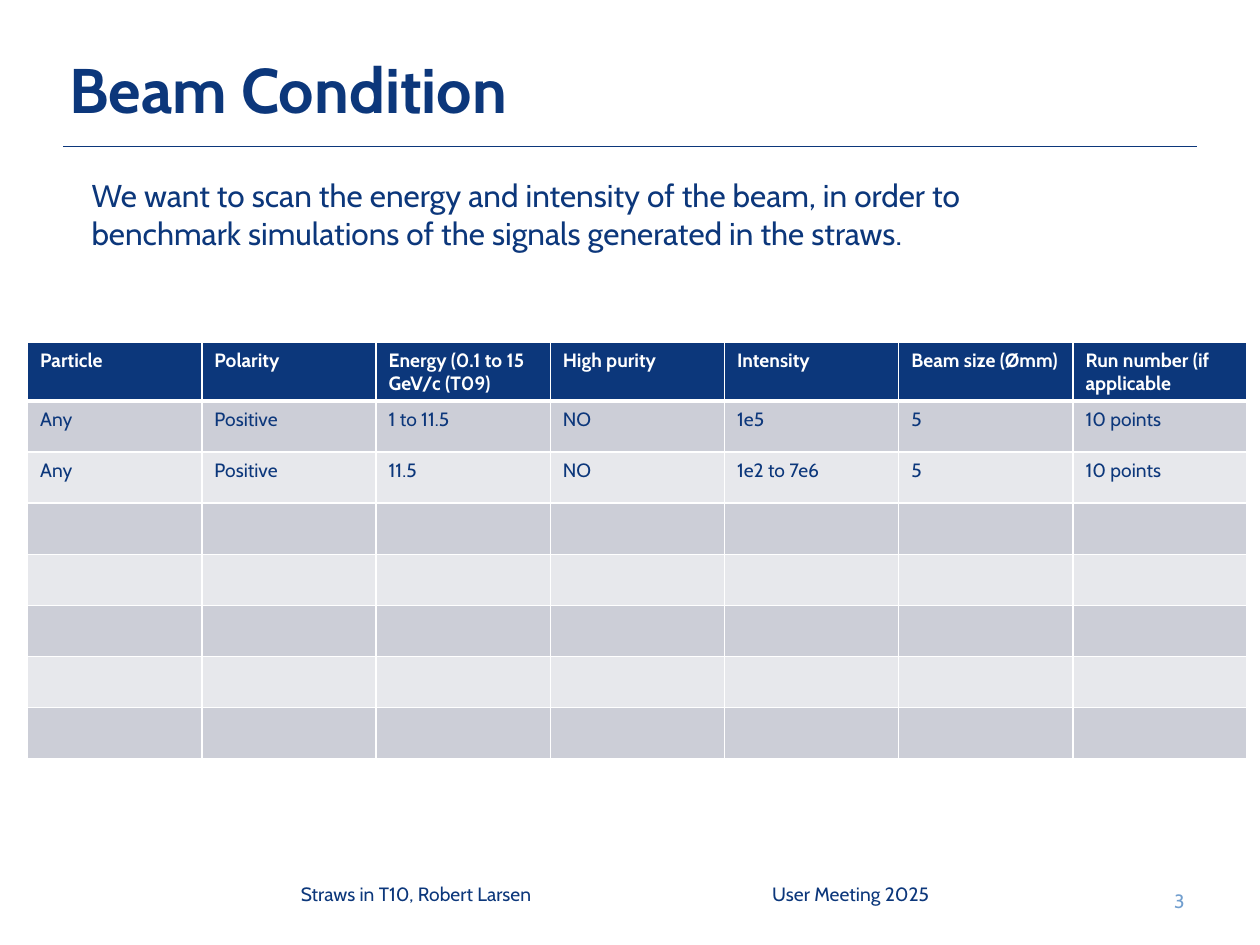
from lxml.etree import SubElement as Sub
from pptx import Presentation
from pptx.dml.color import RGBColor as RGB
from pptx.enum.shapes import MSO_CONNECTOR as Conn
from pptx.enum.text import MSO_ANCHOR as Anchor, PP_ALIGN as Align
from pptx.oxml.ns import qn
from pptx.util import Pt

FONT = "Cabin"
COLORS = {
    "navy": "0C377B",
    "white": "FFFFFF",
    "dark": "CCCED7",
    "light": "E7E8EC",
    "page": "729FCF",
}
HEAD = ["Particle", "Polarity", "Energy (0.1 to 15 GeV/c (T09)", "High purity",
        "Intensity", "Beam size (Ømm)", "Run number (if applicable"]
RUNS = [
    ["Any", "Positive", "1 to 11.5", "NO", "1e5", "5", "10 points"],
    ["Any", "Positive", "11.5", "NO", "1e2 to 7e6", "5", "10 points"],
]
ROWS = 8
COL_W, ROW_H = 99.57, 29.2


def tint(name):
    return RGB.from_string(COLORS[name])


def style(frame, size, color, bold=False):
    for para in frame.paragraphs:
        for run in para.runs:
            font = run.font
            font.name, font.size, font.bold = FONT, Pt(size), bold
            font.color.rgb = tint(color)


def add_text(slide, text, box, size, color="navy", bold=False,
             anchor=Anchor.TOP, align=Align.LEFT, inset=7.2):
    frame = slide.shapes.add_textbox(*map(Pt, box)).text_frame
    frame.word_wrap = True
    frame.vertical_anchor = anchor
    frame.margin_left = frame.margin_right = Pt(inset)
    frame.text = text
    frame.paragraphs[0].alignment = align
    style(frame, size, color, bold)


def add_rule(slide, left, right, y):
    rule = slide.shapes.add_connector(Conn.STRAIGHT, Pt(left), Pt(y), Pt(right), Pt(y))
    rule.line.color.rgb = tint("navy")
    rule.line.width = Pt(0.5)
    Sub(rule._element.spPr, qn("a:effectLst"))


def set_edges(cell, widths):
    props = cell._tc.get_or_add_tcPr()
    for side, width in zip("LRTB", widths):
        line = Sub(props, qn(f"a:ln{side}"), w=str(Pt(width)))
        Sub(Sub(line, qn("a:solidFill")), qn("a:srgbClr"), val=COLORS["white"])


def fill_cell(cell, text, row):
    head = row == 0
    set_edges(cell, (1, 1, 3 if row == 1 else 1, 3 if head else 1))
    cell.fill.solid()
    cell.fill.fore_color.rgb = tint("navy" if head else "dark" if row % 2 else "light")
    cell.text_frame.text = text
    style(cell.text_frame, 11, "white" if head else "navy", head)


def add_grid(slide, left, top):
    cols = len(HEAD)
    table = slide.shapes.add_table(
        ROWS, cols, Pt(left), Pt(top), Pt(cols * COL_W), Pt(ROWS * ROW_H)).table
    for col in table.columns:
        col.width = Pt(COL_W)
    for row in table.rows:
        row.height = Pt(ROW_H)
    data = [HEAD] + RUNS
    data += [[""] * cols] * (ROWS - len(data))
    for r, texts in enumerate(data):
        for c, text in enumerate(texts):
            fill_cell(table.cell(r, c), text, r)


def main():
    deck = Presentation()
    deck.slide_width, deck.slide_height = Pt(720), Pt(540)
    slide = deck.slides.add_slide(deck.slide_layouts[6])
    add_rule(slide, 36, 684, 83.5)
    add_text(slide, "Beam Condition", (36, 18.7, 648, 64), 36, bold=True,
             anchor=Anchor.MIDDLE, inset=3.6)
    add_text(slide, "3", (626.4, 500.4, 57.6, 28.8), 11, "page",
             anchor=Anchor.MIDDLE, align=Align.RIGHT)
    add_text(slide, "User Meeting 2025", (434.2, 500.4, 192.2, 28.8), 11)
    add_grid(slide, 15.8, 195.5)
    add_text(slide, "We want to scan the energy and intensity of the beam, in order to "
             "benchmark simulations of the signals generated in the straws.",
             (45.2, 97.2, 538, 51), 18)
    add_text(slide, "Straws in T10, Robert Larsen", (164.8, 500.4, 204.5, 28.8), 11)
    deck.save("out.pptx")


if __name__ == "__main__":
    main()
